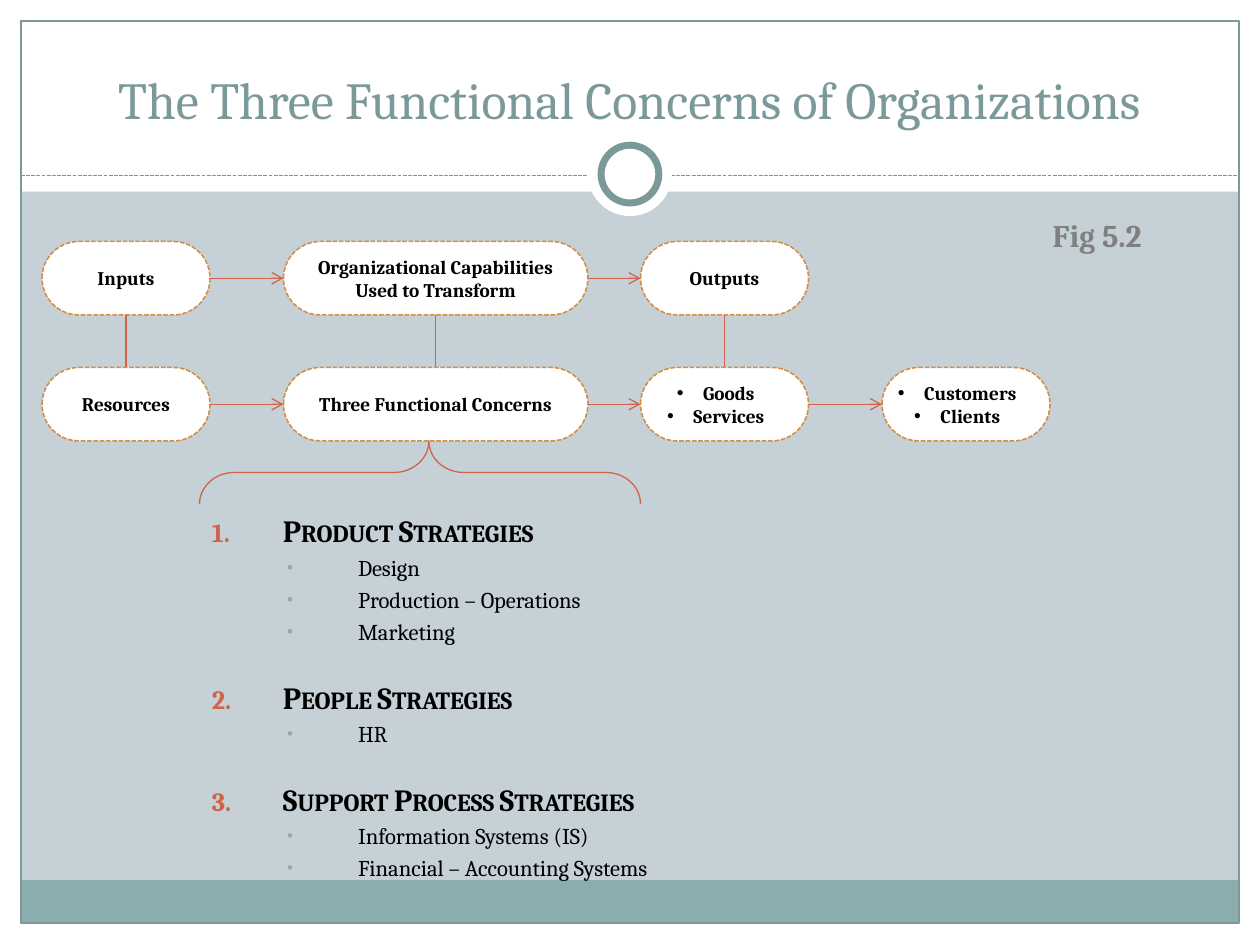
"""Build the slide on the three functional concerns of organizations."""
from dataclasses import dataclass
from typing import Any, Optional

import pptx
import pptx.dml.color
import pptx.enum.dml
import pptx.enum.shapes
import pptx.enum.text
import pptx.oxml.ns
import pptx.util
from lxml import etree

Pt = pptx.util.Pt
Kind = pptx.enum.shapes.MSO_SHAPE
Align = pptx.enum.text.PP_ALIGN
Anchor = pptx.enum.text.MSO_ANCHOR
FONT = "Cambria"
WHITE, BLACK, GRAY = "FFFFFF", "000000", "808080"
TEAL, MINT, RUST, GOLD, MIST = "7C999A", "8CADAE", "D16349", "D19049", "C5D1D7"
TOP, LOW, HIGH = 138, 210, 42


@dataclass
class Panel:
    kind: Any
    box: tuple[float, float, float, float]
    fill: Optional[str] = None
    line: Optional[str] = None
    weight: float = 0.75


@dataclass
class Pill:
    left: float
    top: float
    width: float
    lines: tuple[str, ...]


@dataclass
class Link:
    start: tuple[float, float]
    end: tuple[float, float]
    arrow: bool = False
    color: str = RUST
    dashed: bool = False


@dataclass
class Topic:
    head: str
    items: tuple[str, ...]


PANELS = [
    Panel(Kind.RECTANGLE, (0, 528, 720, 12), WHITE),
    Panel(Kind.RECTANGLE, (0, 0, 720, 109.5), WHITE),
    Panel(Kind.RECTANGLE, (0, 0, 12, 540), WHITE),
    Panel(Kind.RECTANGLE, (708, 0, 12, 540), WHITE),
    Panel(Kind.RECTANGLE, (11.75, 503, 695.75, 24.5), MINT),
    Panel(Kind.RECTANGLE, (12, 12, 696, 515.5), None, TEAL),
]
RINGS = [
    Panel(Kind.OVAL, (336, 75.5, 48, 48), WHITE),
    Panel(Kind.OVAL, (343.5, 83, 33, 33), WHITE, TEAL, 4),
]
PILLS = [
    Pill(24, TOP, 96, ("Inputs",)),
    Pill(24, LOW, 96, ("Resources",)),
    Pill(162, TOP, 174, ("Organizational Capabilities Used to Transform",)),
    Pill(504, LOW, 96, ("Customers", "Clients")),
    Pill(366, LOW, 96, ("Goods", "Services")),
    Pill(366, TOP, 96, ("Outputs",)),
    Pill(162, LOW, 174, ("Three Functional Concerns",)),
]
GAPS = [(TOP, 120, 162), (LOW, 120, 162), (LOW, 336, 366), (TOP, 336, 366), (LOW, 462, 504)]
LINKS = [Link((x, TOP + HIGH), (x, LOW)) for x in (72, 249, 414)]
LINKS += [Link((a, y + HIGH / 2), (b, y + HIGH / 2), True) for y, a, b in GAPS]
TOPICS = [
    Topic("Product Strategies", ("Design", "Production – Operations", "Marketing")),
    Topic("People Strategies", ("HR",)),
    Topic("Support Process Strategies",
          ("Information Systems (IS)", "Financial – Accounting Systems")),
]


def paint(target: Any, color: str) -> None:
    if hasattr(target, "solid"):
        target.solid()
        target = target.fore_color
    target.rgb = pptx.dml.color.RGBColor.from_string(color)


def add(parent: Any, tag: str, **attrs: str) -> Any:
    return etree.SubElement(parent, pptx.oxml.ns.qn(tag), attrs)


def stroke(line: Any, color: str, weight: float, dashed: bool = False) -> None:
    paint(line.fill, color)
    line.width = Pt(weight)
    if dashed:
        line.dash_style = pptx.enum.dml.MSO_LINE.SQUARE_DOT


def draw(slide: Any, panel: Panel) -> Any:
    shape = slide.shapes.add_shape(panel.kind, *map(Pt, panel.box))
    shape.shadow.inherit = False
    if panel.fill:
        paint(shape.fill, panel.fill)
    else:
        shape.fill.background()
    if panel.line:
        stroke(shape.line, panel.line, panel.weight)
    else:
        shape.line.fill.background()
    return shape


def join(slide: Any, link: Link) -> None:
    wire = slide.shapes.add_connector(
        pptx.enum.shapes.MSO_CONNECTOR.STRAIGHT, *map(Pt, link.start + link.end))
    stroke(wire.line, link.color, 0.75, link.dashed)
    if link.arrow:
        add(wire.line._get_or_add_ln(), "a:tailEnd", type="arrow")
    add(wire._element.spPr, "a:effectLst")


def write(para: Any, text: str, size: float, color: str, bold: bool = False) -> Any:
    run = para.add_run()
    run.text = text
    run.font.name, run.font.size, run.font.bold = FONT, Pt(size), bold
    paint(run.font.color, color)
    return run


def mark(para: Any, left: float, hang: float, color: str, scale: int, count: int = 0) -> None:
    props = para._p.get_or_add_pPr()
    props.set("marL", str(Pt(left)))
    props.set("indent", str(Pt(-hang)))
    add(add(props, "a:buClr"), "a:srgbClr", val=color)
    add(props, "a:buSzPct", val=str(scale * 1000))
    if count:
        add(props, "a:buFont", typeface=FONT)
        add(props, "a:buAutoNum", type="arabicPeriod", startAt=str(count))
    else:
        add(props, "a:buFont", typeface="Arial")
        add(props, "a:buChar", char="•")


def label(slide: Any, pill: Pill) -> None:
    shape = draw(slide, Panel(Kind.ROUNDED_RECTANGLE, (pill.left, pill.top, pill.width, HIGH), WHITE))
    shape.adjustments[0] = 0.5
    stroke(shape.line, GOLD, 0.9, True)
    frame = shape.text_frame
    frame.word_wrap, frame.vertical_anchor = True, Anchor.MIDDLE
    listed = len(pill.lines) > 1
    if listed:
        frame.margin_left, frame.margin_right = Pt(0), Pt(10)
    for i, text in enumerate(pill.lines):
        para = frame.add_paragraph() if i else frame.paragraphs[0]
        para.alignment = Align.CENTER
        if listed:
            mark(para, 15, 15, BLACK, 100)
        write(para, text, 11, BLACK, True)


def frame(slide: Any, box: tuple[float, float, float, float], anchor: Any = Anchor.TOP) -> Any:
    text = slide.shapes.add_textbox(*map(Pt, box)).text_frame
    text.word_wrap, text.vertical_anchor = True, anchor
    return text


def outline(slide: Any) -> None:
    text = frame(slide, (114, 288, 348, 216))
    text.margin_top = Pt(1.8)
    for count, topic in enumerate(TOPICS, 1):
        para = text.paragraphs[0] if count == 1 else text.add_paragraph()
        para.line_spacing, para.space_before = Pt(24), Pt(0 if count == 1 else 16)
        mark(para, 40.5, 40.5, RUST, 85, count)
        run = write(para, topic.head, 17.6, BLACK, True)
        run.font._element.set("cap", "small")
        for item in topic.items:
            para = text.add_paragraph()
            para.level, para.line_spacing = 2, Pt(18.3)
            mark(para, 83.5, 40.5, MINT, 75)
            write(para, item, 12.9, BLACK)


def main() -> None:
    deck = pptx.Presentation()
    deck.slide_width, deck.slide_height = Pt(720), Pt(540)
    slide = deck.slides.add_slide(deck.slide_layouts[6])
    paint(slide.background.fill, MIST)
    for panel in PANELS:
        draw(slide, panel)
    join(slide, Link((12, 100.5), (708, 100.5), color=TEAL, dashed=True))
    for ring in RINGS:
        draw(slide, ring)
    heads = [((24, 18, 672, 60), Anchor.BOTTOM, "The Three Functional Concerns of Organizations", 29.7, TEAL, False),
             ((588, 120, 78, 29), Anchor.TOP, "Fig 5.2", 18, GRAY, True)]
    for box, anchor, text, size, color, bold in heads:
        para = frame(slide, box, anchor).paragraphs[0]
        para.alignment = Align.CENTER
        write(para, text, size, color, bold)
    outline(slide)
    for pill in PILLS:
        label(slide, pill)
    for link in LINKS:
        join(slide, link)
    brace = draw(slide, Panel(Kind.LEFT_BRACE, (222, 144, 36, 252), None, RUST))
    brace.rotation = 90
    brace.adjustments[0], brace.adjustments[1] = 0.55, 0.48
    deck.save("out.pptx")


if __name__ == "__main__":
    main()
